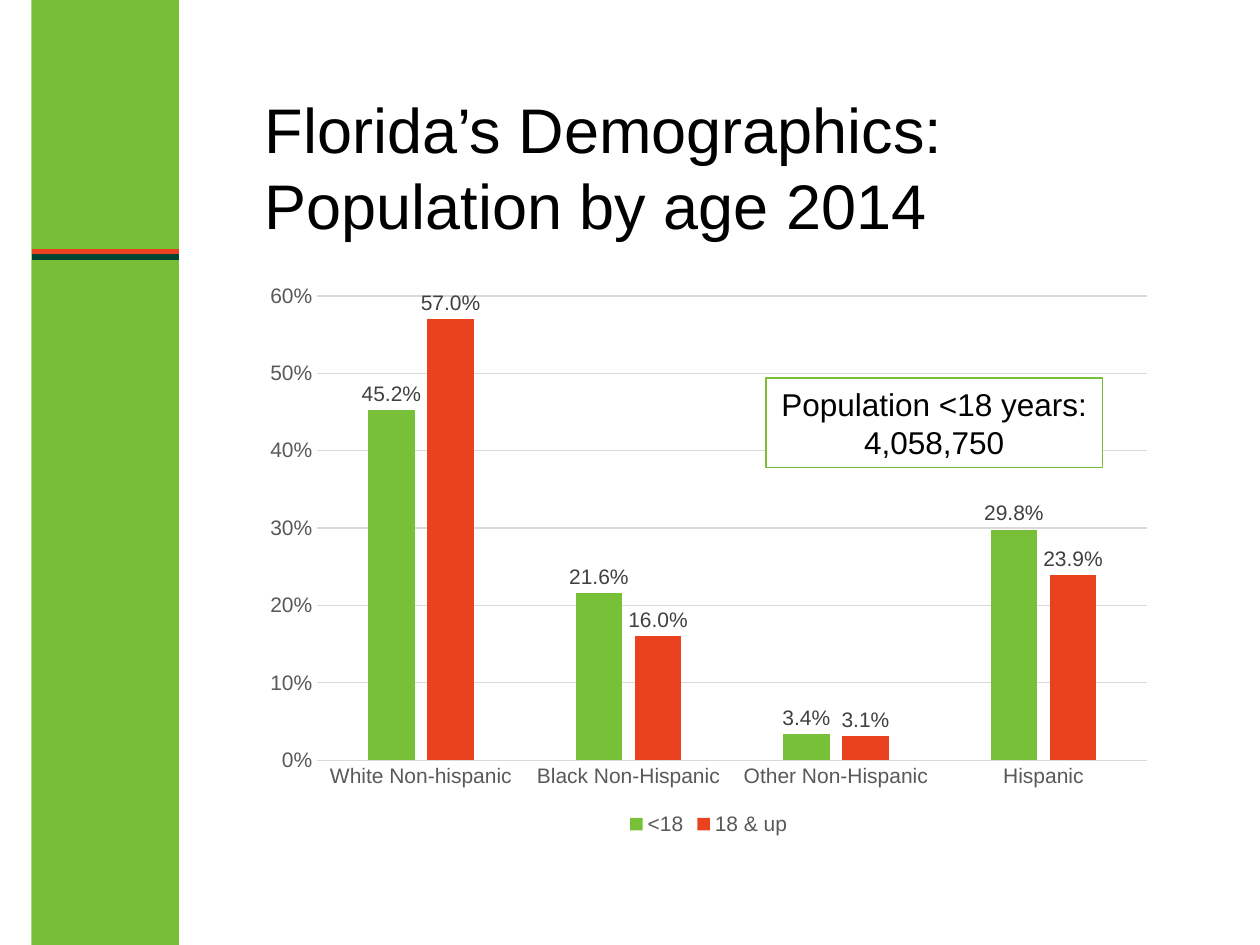
from dataclasses import dataclass
from typing import Any

from lxml.etree import SubElement
from pptx import Presentation
from pptx.chart.data import CategoryChartData
from pptx.dml.color import RGBColor
from pptx.enum.chart import XL_CHART_TYPE, XL_LABEL_POSITION, XL_LEGEND_POSITION, XL_TICK_MARK
from pptx.enum.shapes import MSO_CONNECTOR, MSO_SHAPE
from pptx.enum.text import MSO_ANCHOR, PP_ALIGN
from pptx.oxml.ns import qn
from pptx.util import Emu, Pt

SCALE = 9144
GREEN, LIME, RED, PINE = "78BF37", "78C037", "EA421F", "004531"
WHITE, BLACK, GRID, GREY, DARK = "FFFFFF", "000000", "D9D9D9", "595959", "404040"
FACE = "Arial"


@dataclass(frozen=True)
class Box:
    """A place on the slide in px."""
    left: int
    top: int
    width: int
    height: int

    def emu(self) -> list[Emu]:
        """Return the place in EMU."""
        return [px(n) for n in (self.left, self.top, self.width, self.height)]


@dataclass(frozen=True)
class Rule:
    """A coloured stripe across the side band."""
    top: int
    color: str


@dataclass(frozen=True)
class Group:
    """One age group and its shares."""
    name: str
    color: str
    shares: tuple[float, ...]


BAND = Box(25, 0, 117, 750)
RULES = (Rule(200, RED), Rule(204, PINE))
HEAD = Box(200, 67, 725, 125)
PLOT = Box(200, 217, 725, 450)
NOTE = Box(608, 300, 267, 71)
RACES = ("White Non-hispanic", "Black Non-Hispanic", "Other Non-Hispanic", "Hispanic")
GROUPS = (
    Group("<18", LIME, (0.452, 0.216, 0.034, 0.298)),
    Group("18 & up", RED, (0.57, 0.16, 0.031, 0.239)),
)


def px(n: int) -> Emu:
    """Turn px into EMU."""
    return Emu(n * SCALE)


def rgb(code: str) -> RGBColor:
    """Turn a hex string into a colour."""
    return RGBColor.from_string(code)


def put(item: Any, form: dict[str, Any]) -> None:
    """Set each attribute in the format."""
    for key, value in form.items():
        setattr(item, key, value)


def ink(font: Any, size: int, color: str) -> None:
    """Format a font."""
    put(font, {"name": FACE, "size": Pt(size)})
    font.color.rgb = rgb(color)


def paint(fill: Any, color: str) -> None:
    """Fill with one colour."""
    fill.solid()
    fill.fore_color.rgb = rgb(color)


def stroke(line: Any, color: str, width: float) -> None:
    """Format a line."""
    line.color.rgb = rgb(color)
    line.width = Pt(width)


def block(slide: Any, box: Box, color: str) -> Any:
    """Draw a plain rectangle."""
    shape = slide.shapes.add_shape(MSO_SHAPE.RECTANGLE, *box.emu())
    shape.shadow.inherit = False
    paint(shape.fill, color)
    shape.line.fill.background()
    return shape


def stripe(slide: Any, rule: Rule) -> None:
    """Draw a stripe across the band."""
    left, right, top = px(BAND.left), px(BAND.left + BAND.width), px(rule.top)
    line = slide.shapes.add_connector(MSO_CONNECTOR.STRAIGHT, left, top, right, top)
    stroke(line.line, rule.color, 3)
    SubElement(line._element.spPr, qn("a:effectLst"))


def title(slide: Any) -> None:
    """Write the title."""
    shape = slide.shapes.title
    put(shape, dict(zip(("left", "top", "width", "height"), HEAD.emu())))
    frame = shape.text_frame
    frame.text = "Florida’s Demographics:\nPopulation by age 2014"
    put(frame, {"word_wrap": True, "vertical_anchor": MSO_ANCHOR.BOTTOM, "margin_bottom": 0})
    for para in frame.paragraphs:
        para.alignment = PP_ALIGN.LEFT
        ink(para.font, 36, BLACK)


def graph(slide: Any) -> None:
    """Draw the column chart."""
    data = CategoryChartData(number_format="0.0%")
    data.categories = RACES
    for group in GROUPS:
        data.add_series(group.name, group.shares)
    kind = XL_CHART_TYPE.COLUMN_CLUSTERED
    chart = slide.shapes.add_chart(kind, *PLOT.emu(), data).chart
    put(chart, {"has_title": False, "has_legend": True})
    ink(chart.font, 10, BLACK)
    put(chart.legend, {"position": XL_LEGEND_POSITION.BOTTOM, "include_in_layout": False})
    ink(chart.legend.font, 12, GREY)
    plot = chart.plots[0]
    put(plot, {"gap_width": 219, "overlap": -27, "vary_by_categories": False})
    for bars, group in zip(plot.series, GROUPS):
        paint(bars.format.fill, group.color)
        put(bars.data_labels, {
            "show_value": True, "number_format": "0.0%",
            "number_format_is_linked": False, "position": XL_LABEL_POSITION.OUTSIDE_END,
        })
        ink(bars.data_labels.font, 12, DARK)
    for axis in (chart.category_axis, chart.value_axis):
        put(axis, {"major_tick_mark": XL_TICK_MARK.NONE, "minor_tick_mark": XL_TICK_MARK.NONE})
        ink(axis.tick_labels.font, 12, GREY)
    stroke(chart.category_axis.format.line, GRID, 0.75)
    value = chart.value_axis
    put(value, {"minimum_scale": 0, "maximum_scale": 0.6, "major_unit": 0.1})
    put(value.tick_labels, {"number_format": "0%", "number_format_is_linked": False})
    value.format.line.fill.background()
    stroke(value.major_gridlines.format.line, GRID, 0.75)


def note(slide: Any) -> None:
    """Draw the boxed head count."""
    shape = block(slide, NOTE, WHITE)
    stroke(shape.line, LIME, 0.75)
    frame = shape.text_frame
    frame.text = "Population <18 years: 4,058,750"
    put(frame, {"word_wrap": True, "vertical_anchor": MSO_ANCHOR.MIDDLE})
    para = frame.paragraphs[0]
    para.alignment = PP_ALIGN.CENTER
    ink(para.font, 18, BLACK)


def main() -> None:
    """Build and save the slide."""
    deck = Presentation()
    put(deck, {"slide_width": px(1000), "slide_height": px(750)})
    slide = deck.slides.add_slide(deck.slide_layouts[5])
    block(slide, BAND, GREEN)
    for rule in RULES:
        stripe(slide, rule)
    title(slide)
    graph(slide)
    note(slide)
    deck.save("out.pptx")


if __name__ == "__main__":
    main()
